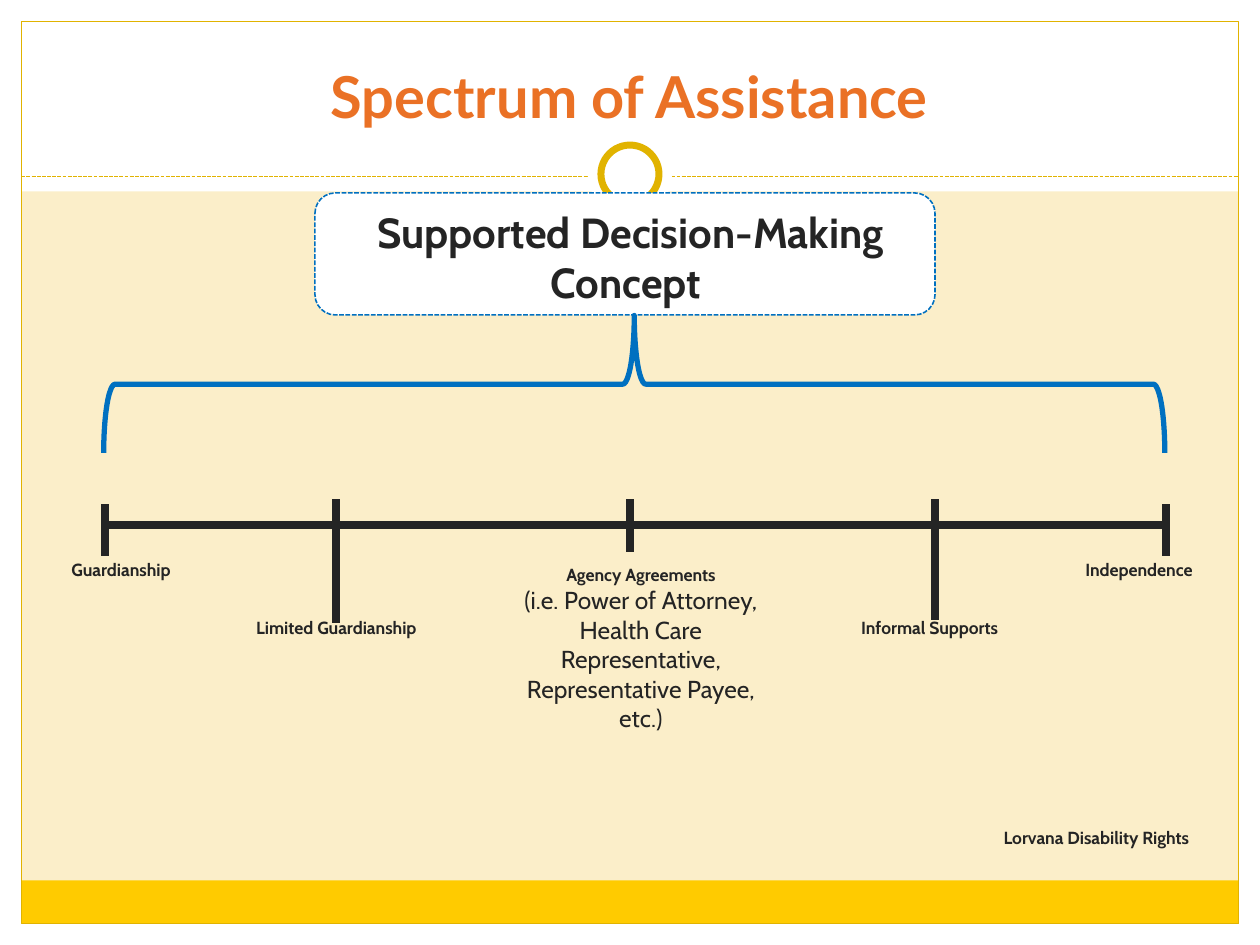
from dataclasses import dataclass

from lxml.etree import SubElement
from pptx import Presentation
from pptx.dml.color import RGBColor
from pptx.enum.dml import MSO_LINE
from pptx.enum.shapes import MSO_CONNECTOR, MSO_SHAPE
from pptx.enum.text import MSO_ANCHOR, MSO_AUTO_SIZE, PP_ALIGN
from pptx.oxml.ns import qn
from pptx.util import Cm, Pt

COLORS = {
    "cream": "FBEEC9",
    "white": "FFFFFF",
    "yellow": "FFCB00",
    "gold": "E1B300",
    "blue": "0070C0",
    "orange": "EA7125",
    "ink": "242424",
}
WIDTH, HEIGHT, MARGIN = 25.4, 19.05, 0.43
CENTER = WIDTH / 2
AXIS_LEFT, AXIS_RIGHT, AXIS_Y = 2.11, 23.5, 10.59


@dataclass
class Box:
    left: float
    top: float
    width: float
    height: float

    def lengths(self) -> tuple:
        return Cm(self.left), Cm(self.top), Cm(self.width), Cm(self.height)


@dataclass
class Stroke:
    color: str
    width: float
    dashed: bool = False


@dataclass
class Figure:
    preset: MSO_SHAPE
    box: Box
    fill: str | None = None
    stroke: Stroke | None = None
    rotation: float = 0


@dataclass
class Tick:
    x: float
    top: float
    bottom: float


@dataclass
class Label:
    box: Box
    heading: str
    detail: str = ""
    size: float = 10


def rgb(name: str) -> RGBColor:
    return RGBColor.from_string(COLORS[name])


def apply_stroke(line, stroke: Stroke) -> None:
    line.color.rgb = rgb(stroke.color)
    line.width = Pt(stroke.width)
    if stroke.dashed:
        line.dash_style = MSO_LINE.SQUARE_DOT


def draw_figure(slide, figure: Figure) -> None:
    shape = slide.shapes.add_shape(figure.preset, *figure.box.lengths())
    shape.shadow.inherit = False
    shape.rotation = figure.rotation
    if figure.fill:
        shape.fill.solid()
        shape.fill.fore_color.rgb = rgb(figure.fill)
    else:
        shape.fill.background()
    if figure.stroke:
        apply_stroke(shape.line, figure.stroke)
    else:
        shape.line.fill.background()


def draw_line(slide, x1: float, y1: float, x2: float, y2: float, stroke: Stroke) -> None:
    connector = slide.shapes.add_connector(
        MSO_CONNECTOR.STRAIGHT, Cm(x1), Cm(y1), Cm(x2), Cm(y2)
    )
    apply_stroke(connector.line, stroke)
    SubElement(connector.element.spPr, qn("a:effectLst"))


def format_paragraph(paragraph, font: str, size: float, color: str, bold: bool) -> None:
    paragraph.alignment = PP_ALIGN.CENTER
    for run in paragraph.runs:
        run.font.name = font
        run.font.size = Pt(size)
        run.font.bold = bold
        run.font.color.rgb = rgb(color)


def draw_label(slide, label: Label) -> None:
    frame = slide.shapes.add_textbox(*label.box.lengths()).text_frame
    frame.word_wrap = True
    heading = frame.paragraphs[0]
    heading.text = label.heading
    format_paragraph(heading, "Cabin", label.size, "ink", True)
    if label.detail:
        detail = frame.add_paragraph()
        detail.text = label.detail
        format_paragraph(detail, "Cabin", 14, "ink", False)


def place_title(slide, text: str) -> None:
    title = slide.shapes.title
    title.left, title.top, title.width, title.height = Box(0.84, 0.64, 23.7, 2.11).lengths()
    title.element.getparent().append(title.element)
    frame = title.text_frame
    frame.text = text
    frame.auto_size = MSO_AUTO_SIZE.NONE
    frame.vertical_anchor = MSO_ANCHOR.BOTTOM
    format_paragraph(frame.paragraphs[0], "Lato", 33, "orange", True)


def circle(diameter: float, stroke: Stroke | None = None) -> Figure:
    box = Box(CENTER - diameter / 2, 3.51 - diameter / 2, diameter, diameter)
    return Figure(MSO_SHAPE.OVAL, box, "white", stroke)


RECT = MSO_SHAPE.RECTANGLE
INNER = WIDTH - 2 * MARGIN
THIN_GOLD = Stroke("gold", 0.75)
AXIS = Stroke("ink", 4.5)

BORDERS = [
    Figure(RECT, Box(0, HEIGHT - MARGIN, WIDTH, MARGIN), "white"),
    Figure(RECT, Box(0, 0, WIDTH, 3.86), "white"),
    Figure(RECT, Box(0, 0, MARGIN, HEIGHT), "white"),
    Figure(RECT, Box(WIDTH - MARGIN, 0, MARGIN, HEIGHT), "white"),
    Figure(RECT, Box(MARGIN, 17.75, INNER, 0.87), "yellow"),
    Figure(RECT, Box(MARGIN, MARGIN, INNER, HEIGHT - 2 * MARGIN), None, THIN_GOLD),
]
EMBLEM = [
    circle(1.7),
    circle(1.17, Stroke("gold", 4)),
    Figure(MSO_SHAPE.ROUNDED_RECTANGLE, Box(6.35, 3.89, 12.5, 2.46), "white",
           Stroke("blue", 0.9, True)),
]
BRACE = Figure(MSO_SHAPE.LEFT_BRACE, Box(11.4, -2.95, 2.77, 21.39), None,
               Stroke("blue", 3), 90)
TICKS = [
    Tick(AXIS_LEFT, 10.16, 11.2),
    Tick(AXIS_RIGHT, 10.16, 11.2),
    Tick(6.78, 10.06, 12.55),
    Tick(CENTER, 10.06, 11.13),
    Tick(18.85, 10.06, 12.5),
]
LABELS = [
    Label(Box(0, 11.15, 4.88, 1.02), "Guardianship"),
    Label(Box(20.52, 11.15, 4.88, 1.02), "Independence"),
    Label(Box(4.34, 12.32, 4.88, 1.8), "Limited Guardianship"),
    Label(Box(9.96, 11.25, 5.92, 5.56), "Agency Agreements",
          "(i.e. Power of Attorney, Health Care Representative, Representative Payee, etc.)"),
    Label(Box(16.61, 12.32, 4.34, 1.8), "Informal Supports "),
    Label(Box(19.05, 16.54, 6.1, 0.69), "Lorvana Disability Rights"),
    Label(Box(6.78, 4.04, 11.86, 2.31), "Supported Decision-Making Concept ", size=24),
]


def main() -> None:
    presentation = Presentation()
    presentation.slide_width, presentation.slide_height = Cm(WIDTH), Cm(HEIGHT)
    slide = presentation.slides.add_slide(presentation.slide_layouts[5])
    slide.background.fill.solid()
    slide.background.fill.fore_color.rgb = rgb("cream")

    for border in BORDERS:
        draw_figure(slide, border)
    draw_line(slide, MARGIN, 3.56, WIDTH - MARGIN, 3.56, Stroke("gold", 0.75, True))
    for part in EMBLEM:
        draw_figure(slide, part)
    place_title(slide, "Spectrum of Assistance")

    draw_line(slide, AXIS_LEFT, AXIS_Y, AXIS_RIGHT, AXIS_Y, AXIS)
    for tick in TICKS:
        draw_line(slide, tick.x, tick.top, tick.x, tick.bottom, AXIS)
    draw_figure(slide, BRACE)
    for label in LABELS:
        draw_label(slide, label)

    presentation.save("out.pptx")


if __name__ == "__main__":
    main()
